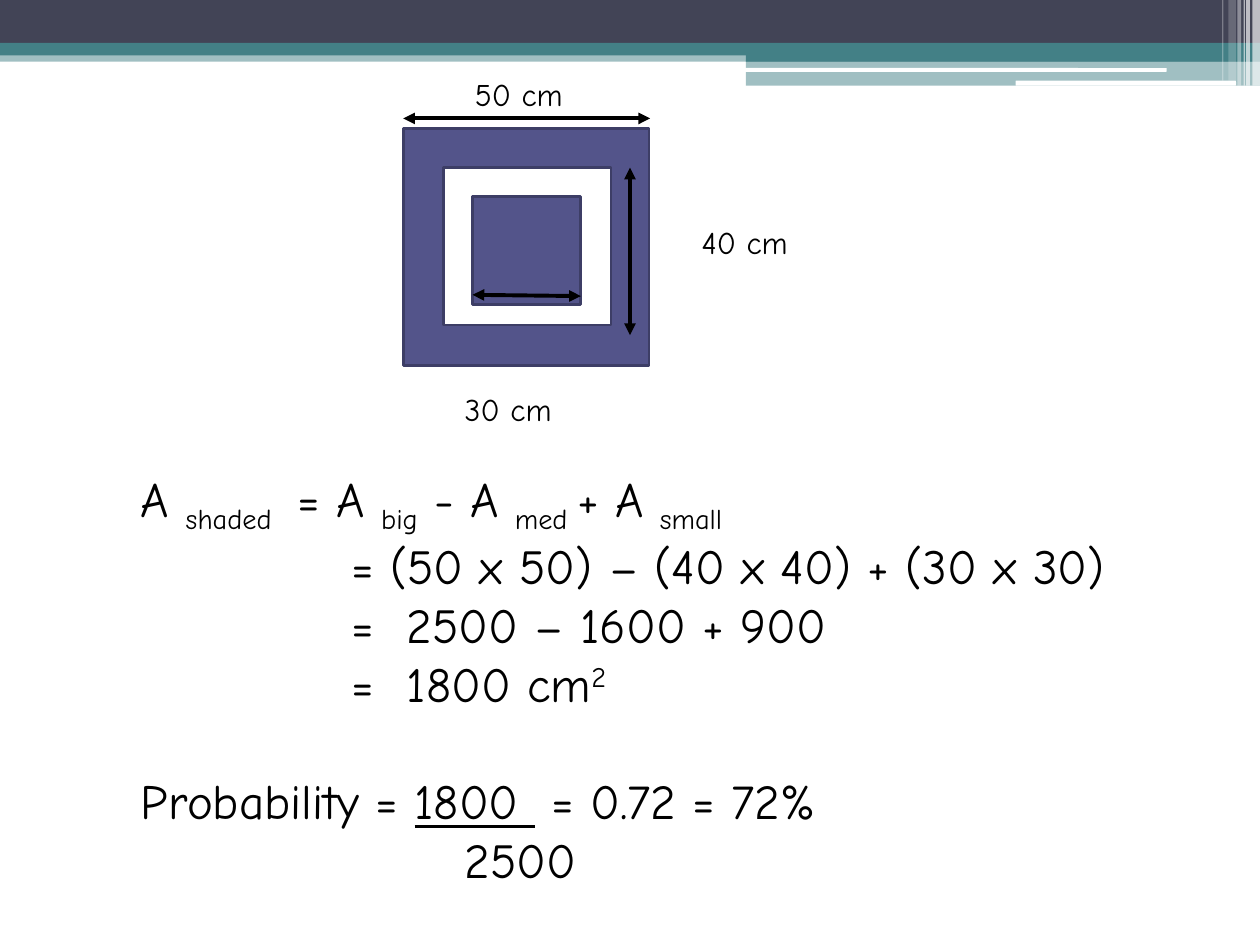
from dataclasses import dataclass

from lxml import etree
from pptx import Presentation
from pptx.dml.color import RGBColor
from pptx.enum.shapes import MSO_CONNECTOR, MSO_SHAPE
from pptx.enum.text import MSO_AUTO_SIZE
from pptx.oxml.ns import qn
from pptx.util import Inches, Pt

RECT = MSO_SHAPE.RECTANGLE
ROUNDED = MSO_SHAPE.ROUNDED_RECTANGLE
STRAIGHT = MSO_CONNECTOR.STRAIGHT
FIT_SHAPE = MSO_AUTO_SIZE.SHAPE_TO_FIT_TEXT
SLIDE_WIDTH, SLIDE_HEIGHT = Inches(10), Inches(7.5)
COLUMNS, ROWS = 100, 75


@dataclass(frozen=True)
class Theme:
    font: str = "Comic Neue"
    label_size: float = 18
    working_size: float = 28
    line_gap: float = 33.7
    ink: str = "000000"
    paper: str = "FFFFFF"
    navy: str = "424456"
    teal: str = "438086"
    shaded: str = "53548A"
    outline: str = "3D3E66"
    outline_width: float = 1.5
    arrow_width: float = 2.25


THEME = Theme()


def col(count):
    return round(SLIDE_WIDTH * count / COLUMNS)


def row(count):
    return round(SLIDE_HEIGHT * count / ROWS)


def place(left, top, width, height):
    return col(left), row(top), col(width), row(height)


def color(code):
    return RGBColor.from_string(code)


def add_block(shapes, area, fill, opacity=100, preset=RECT, outline=None):
    block = shapes.add_shape(preset, *place(*area))
    block.shadow.inherit = False
    block.fill.solid()
    block.fill.fore_color.rgb = color(fill)
    if opacity < 100:
        tint = block.fill._xPr.find(qn("a:solidFill"))[0]
        etree.SubElement(tint, qn("a:alpha"), val=str(opacity * 1000))
    if outline:
        block.line.color.rgb = color(outline)
        block.line.width = Pt(THEME.outline_width)
    else:
        block.line.fill.background()


def add_dimension(shapes, start, end):
    arrow = shapes.add_connector(
        STRAIGHT, col(start[0]), row(start[1]), col(end[0]), row(end[1]))
    arrow.line.color.rgb = color(THEME.ink)
    arrow.line.width = Pt(THEME.arrow_width)
    stroke = arrow.line._get_or_add_ln()
    for tip in ("a:headEnd", "a:tailEnd"):
        etree.SubElement(stroke, qn(tip), type="triangle")
    etree.SubElement(arrow._element.spPr, qn("a:effectLst"))


def add_text_frame(shapes, area):
    frame = shapes.add_textbox(*place(*area)).text_frame
    frame.word_wrap = True
    frame.auto_size = FIT_SHAPE
    return frame


def style_paragraph(paragraph, size):
    paragraph.font.name = THEME.font
    paragraph.font.size = Pt(size)
    paragraph.font.color.rgb = color(THEME.ink)


def add_label(shapes, left, top, wording):
    paragraph = add_text_frame(shapes, (left, top, 11.7, 4)).paragraphs[0]
    paragraph.text = wording
    style_paragraph(paragraph, THEME.label_size)


def add_step(paragraph, pieces, start=0, hang=0):
    style_paragraph(paragraph, THEME.working_size)
    indents = paragraph._p.get_or_add_pPr()
    indents.set("marL", str(col(start + hang)))
    indents.set("indent", str(-col(hang)))
    for wording, baseline in pieces:
        run = paragraph.add_run()
        run.text = wording
        if baseline:
            run.font._element.set("baseline", str(baseline * 1000))


def draw_banner(shapes):
    bands = (
        ((0, 4, 100, 0.9), THEME.teal, 50),
        ((0, 0, 100, 3.4), THEME.navy, 100),
        ((0, 3.4, 100, 1), THEME.teal, 100),
        ((59.2, 3.9, 40.8, 1), THEME.teal, 100),
        ((59.2, 4.8, 40.8, 2), THEME.teal, 50),
    )
    for area, fill, opacity in bands:
        add_block(shapes, area, fill, opacity)
    for area in ((59.1, 5.4, 33.5, 0.3), (80.6, 6.4, 17.5, 0.4)):
        add_block(shapes, area, THEME.paper, preset=ROUNDED)
    stripes = (
        (99.4, 0.6, 6.8, 65), (98.9, 0.3, 6.8, 65), (98.7, 0.1, 6.8, 60),
        (98.2, 0.3, 6.8, 40), (97.5, 0.6, 6.4, 20), (97, 0.1, 6.4, 30),
    )
    for left, width, height, opacity in stripes:
        add_block(shapes, (left, 0, width, height), THEME.paper, opacity)


def draw_squares(shapes):
    squares = (
        ((32, 10.2, 19.5, 18.8), THEME.shaded),
        ((35.2, 13.3, 13.3, 12.5), THEME.paper),
        ((37.5, 15.6, 8.6, 8.6), THEME.shaded),
    )
    for area, fill in squares:
        add_block(shapes, area, fill, outline=THEME.outline)
    dimensions = (
        ((32, 9.4), (51.6, 9.4), (36.7, 5.5), "50 cm"),
        ((50, 13.3), (50, 26.6), (54.7, 17.2), "40 cm"),
        ((46.1, 23.5), (37.5, 23.4), (35.9, 30.5), "30 cm"),
    )
    for start, end, corner, length in dimensions:
        add_dimension(shapes, start, end)
        add_label(shapes, *corner, length)


def write_working(shapes):
    frame = add_text_frame(shapes, (10.2, 36.7, 85.9, 32.4))
    equals, hang = 16.7, 4.4
    formula = (("A ", 0), ("shaded ", -25), (" = A ", 0), ("big", -25),
               (" - A ", 0), ("med ", -25), ("+ A ", 0), ("small", -25))
    add_step(frame.paragraphs[0], formula)
    add_step(frame.add_paragraph(),
             [("= (50 x 50) – (40 x 40) + (30 x 30)", 0)], equals)
    add_step(frame.add_paragraph(), [("=\t2500 – 1600 + 900", 0)], equals, hang)
    add_step(frame.add_paragraph(), [("=\t1800 cm", 0), ("2", 30)], equals, hang)
    probability = frame.add_paragraph()
    add_step(probability,
             [("Probability = ", 0), ("1800 ", 0), (" = 0.72 = 72%", 0)])
    probability.space_before = Pt(THEME.line_gap)
    probability.runs[1].font.underline = True
    add_step(frame.add_paragraph(), [("2500", 0)], 25.7)


def main():
    deck = Presentation()
    deck.slide_width, deck.slide_height = SLIDE_WIDTH, SLIDE_HEIGHT
    slide = deck.slides.add_slide(deck.slide_layouts[6])
    draw_banner(slide.shapes)
    draw_squares(slide.shapes.add_group_shape().shapes)
    write_working(slide.shapes)
    deck.save("out.pptx")


if __name__ == "__main__":
    main()
